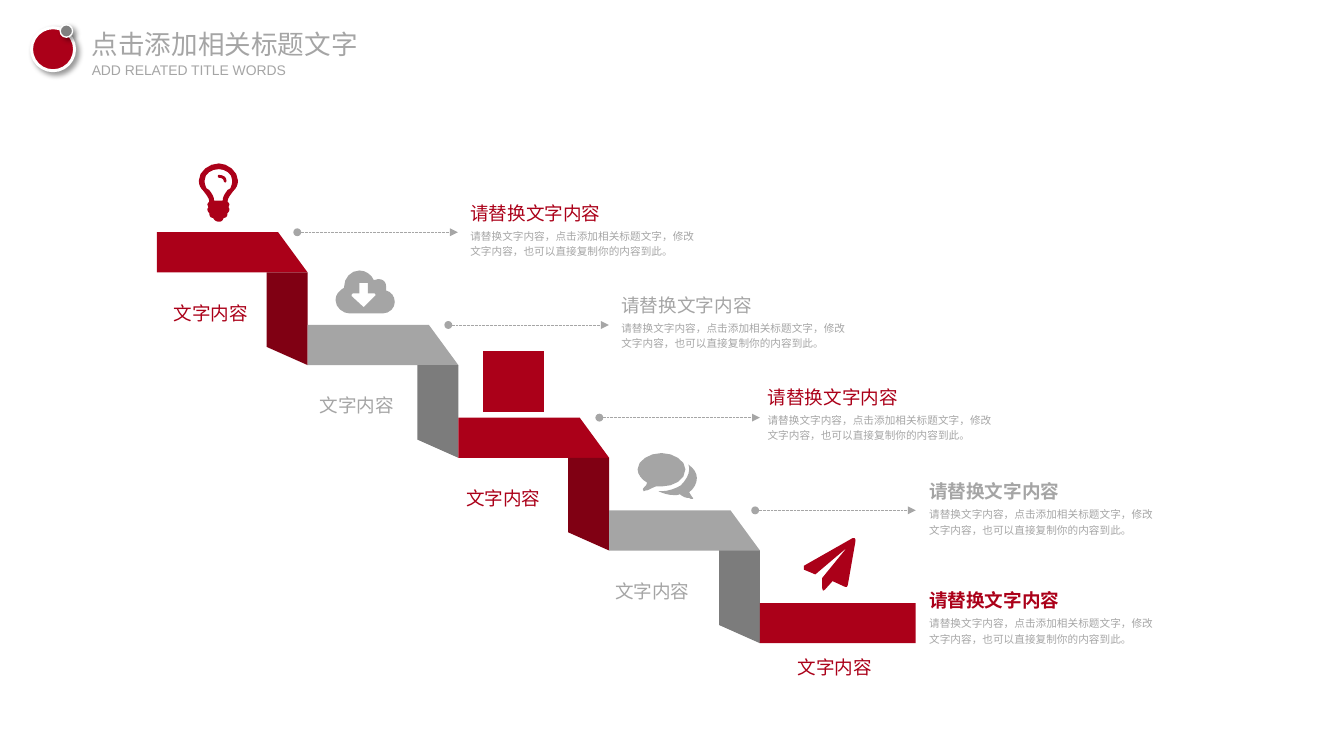
from dataclasses import dataclass
from lxml.etree import SubElement as Sub
from pptx import Presentation
from pptx.dml.color import RGBColor as RGB
from pptx.enum.dml import MSO_LINE as Dash
from pptx.enum.shapes import MSO_CONNECTOR as Link, MSO_SHAPE as Kind
from pptx.enum.text import MSO_ANCHOR as Anchor, MSO_AUTO_SIZE as Fit, PP_ALIGN as Align
from pptx.oxml.ns import qn
from pptx.util import Inches, Pt


@dataclass(frozen=True)
class Theme:
    font: str = "Arial"
    red: str = "AB0019"
    wine: str = "800013"
    gray: str = "A5A5A5"
    slate: str = "7C7C7C"
    dot: str = "808080"
    note: str = "A6A6A6"
    white: str = "FFFFFF"
    title: float = 20
    sub: float = 10.5
    head: float = 14
    body: float = 8


T = Theme()
TITLE, SUB = "点击添加相关标题文字", "ADD RELATED TITLE WORDS"
LABEL, HEAD = "文字内容", "请替换文字内容"
BODY = "请替换文字内容，点击添加相关标题文字，修改文字内容，也可以直接复制你的内容到此。"

BULB = [
    [(36, 29), (34, 32, 30, 36, 30, 40), (31, 41, 32, 42, 32, 43), (32, 44, 31, 45, 31, 46),
     (31, 46, 32, 47, 32, 48), (32, 50, 31, 51, 30, 52), (30, 53), (30, 56, 28, 57, 26, 57),
     (25, 60, 24, 61, 21, 61), (19, 61, 16, 60, 15, 57), (13, 57, 11, 56, 11, 53), (11, 52),
     (10, 51, 9, 50, 9, 48), (9, 47, 10, 46, 10, 46), (10, 45, 9, 44, 9, 43),
     (9, 42, 10, 41, 11, 40), (11, 36, 7, 32, 5, 29), (2, 26, 0, 23, 0, 18),
     (0, 8, 11, 0, 21, 0), (30, 0, 41, 8, 41, 18), (41, 23, 39, 26, 36, 29)],
    [(21, 6), (14, 6, 6, 10, 6, 18), (6, 21, 7, 24, 8, 26), (9, 27, 10, 27, 11, 28),
     (14, 32, 16, 35, 16, 39), (25, 39), (25, 35, 27, 32, 30, 28), (31, 27, 32, 27, 33, 26),
     (34, 24, 35, 21, 35, 18), (35, 10, 27, 6, 21, 6)],
    [(28, 20), (27, 20, 26, 19, 26, 18), (26, 16, 23, 15, 21, 15), (20, 15, 20, 14, 20, 13),
     (20, 13, 20, 12, 21, 12), (25, 12, 29, 14, 29, 18), (29, 19, 28, 20, 28, 20)],
]
CLOUD = [
    [(49, 45), (15, 45), (8, 45, 0, 39, 0, 31), (0, 25, 4, 21, 9, 18), (9, 17),
     (9, 8, 16, 0, 25, 0), (32, 0, 38, 5, 40, 10), (42, 10, 44, 9, 45, 9),
     (50, 9, 53, 12, 53, 17), (53, 18, 53, 20, 53, 21), (58, 22, 62, 27, 62, 33),
     (62, 39, 57, 45, 49, 45)],
    [(41, 24), (34, 24), (34, 13), (25, 13), (25, 24), (18, 24), (17, 25), (17, 27),
     (29, 38), (30, 38), (41, 27), (42, 26), (42, 25, 41, 24, 41, 24)],
]
BLOCK = [[(0, 0), (64, 0), (64, 64), (0, 64)]]
CHAT = [
    [(25, 35), (23, 35, 21, 35, 19, 35), (16, 36, 13, 38, 10, 39), (8, 39, 7, 40, 6, 40),
     (6, 39), (5, 38, 6, 37, 6, 37), (7, 35, 9, 35, 10, 31), (5, 28, 0, 23, 0, 17),
     (0, 8, 12, 0, 25, 0), (38, 0, 50, 8, 50, 17), (50, 28, 38, 35, 25, 35)],
    [(54, 41), (55, 43, 56, 44, 57, 46), (58, 47), (58, 48, 58, 48, 57, 48),
     (56, 48, 55, 48, 54, 47), (50, 47, 48, 46, 44, 43), (43, 44, 41, 44, 38, 44),
     (32, 44, 26, 42, 22, 40), (23, 40, 25, 40, 25, 40), (32, 40, 40, 37, 45, 34),
     (50, 29, 54, 23, 54, 17), (54, 16, 54, 14, 53, 12), (59, 16, 62, 21, 62, 26),
     (62, 32, 59, 37, 54, 41)],
]
PLANE = [
    [(54, 3), (46, 49), (45, 51), (43, 51), (30, 45), (22, 54), (20, 55), (19, 52), (19, 42),
     (45, 10), (12, 38), (0, 33), (0, 29), (51, 0), (53, 0), (54, 1, 54, 2, 54, 3)],
]
STEPS = [
    (BULB, (2.08, 1.71), (1.81, 3.11), 3.11, (4.92, 2.07), False),
    (CLOUD, (3.51, 2.83), (3.34, 4.08), 4.69, (6.5, 3.03), False),
    (BLOCK, (5.05, 3.67), (4.87, 5.05), 6.27, (8.03, 3.99), False),
    (CHAT, (6.67, 4.74), (6.43, 6.02), 7.9, (9.72, 4.98), True),
    (PLANE, (8.41, 5.63), (8.34, 6.82), None, (9.72, 6.12), True),
]
LEFT, TOP, RUN, DROP, THICK = 1.64, 2.43, (7.95 - 1.64) / 4, 0.97, 0.42
TREAD = [[(0, 0), (127, 0), (RUN * 100, 42), (0, 42)]]
RISER = [[(115, 42), (115, 120), (RUN * 100, 139), (RUN * 100, 42)]]

deck = Presentation()
deck.slide_width, deck.slide_height = Inches(14.06), Inches(7.91)
page = deck.slides.add_slide(deck.slide_layouts[6]).shapes


def paint(shape, color):
    shape.shadow.inherit = False
    shape.fill.solid()
    shape.fill.fore_color.rgb = RGB.from_string(color)
    shape.line.fill.background()
    return shape


def trace(loop):
    dots = [loop[0]]
    for part in loop[1:]:
        if len(part) == 2:
            dots.append(part)
            continue
        ends = [dots[-1], part[:2], part[2:4], part[4:]]
        for t in (0.25, 0.5, 0.75, 1):
            s = 1 - t
            mix = (s ** 3, 3 * s * s * t, 3 * s * t * t, t ** 3)
            dots.append(tuple(sum(m * p[k] for m, p in zip(mix, ends)) for k in (0, 1)))
    return dots


def draw(loops, x, y, color):
    pen = None
    for loop in loops:
        dots = [(Inches(x + a / 100), Inches(y + b / 100)) for a, b in trace(loop)]
        if pen:
            pen.move_to(*dots[0])
        else:
            pen = page.build_freeform(*dots[0])
        pen.add_line_segments(dots[1:], close=True)
    paint(pen.convert_to_shape(), color)


def write(text, x, y, w, h, size, color, align=Align.LEFT, wrap=False, bold=None,
          lead=None, gap=False):
    frame = page.add_textbox(Inches(x), Inches(y), Inches(w), Inches(h)).text_frame
    frame.margin_left = frame.margin_right = frame.margin_top = frame.margin_bottom = 0
    frame.word_wrap, frame.auto_size = wrap, Fit.SHAPE_TO_FIT_TEXT
    frame.vertical_anchor = Anchor.MIDDLE if gap else Anchor.TOP
    para = frame.paragraphs[0]
    para.alignment, para.line_spacing = align, lead
    if gap:
        Sub(Sub(para._p.get_or_add_pPr(), qn("a:spcBef")), qn("a:spcPct"), val="20000")
    run = para.add_run()
    run.text = text
    run.font.name, run.font.size, run.font.bold = T.font, Pt(size), bold
    run.font.color.rgb = RGB.from_string(color)


def point(x, y):
    link = page.add_connector(Link.STRAIGHT, Inches(x), Inches(y), Inches(x + 1.68), Inches(y))
    link.line.color.rgb = RGB.from_string(T.note)
    link.line.width, link.line.dash_style = Pt(0.5), Dash.ROUND_DOT
    edge = link.line._get_or_add_ln()
    Sub(edge, qn("a:headEnd"), type="oval")
    Sub(edge, qn("a:tailEnd"), type="triangle")
    Sub(link._element.spPr, qn("a:effectLst"))


def badge(x, y, size, color, rim):
    disc = paint(page.add_shape(Kind.OVAL, Inches(x), Inches(y), Inches(size), Inches(size)), color)
    disc.line.color.rgb, disc.line.width = RGB.from_string(T.white), Pt(rim)
    glow = Sub(disc._element.spPr.find(qn("a:effectLst")), qn("a:outerShdw"),
               blurRad=str(Pt(4)), dist=str(Pt(3)), dir="2700000", algn="tl", rotWithShape="0")
    Sub(Sub(glow, qn("a:srgbClr"), val="000000"), qn("a:alpha"), val="40000")


for i, (icon, spot, tag, start, head, bold) in enumerate(STEPS):
    x, y = LEFT + i * RUN, TOP + i * DROP
    color, shade = ((T.red, T.wine), (T.gray, T.slate))[i % 2]
    if start:
        draw(TREAD, x, y, color)
        draw(RISER, x, y, shade)
        point(start, y)
    else:
        paint(page.add_shape(Kind.RECTANGLE, Inches(x), Inches(y), Inches(1.63), Inches(THICK)), color)
    draw(icon, *spot, color)
    write(LABEL, *tag, 0.79, 0.28, T.head, color, align=Align.CENTER, lead=1.2)
    write(HEAD, *head, 1.54, 0.28, T.head, color, bold=bold, lead=1.2, gap=True)
    write(BODY, head[0], head[1] + 0.23, 2.35, 0.48, T.body, T.note, wrap=True, lead=1.2, gap=True)

write(TITLE, 0.96, 0.29, 2.8, 0.34, T.title, T.gray)
write(SUB, 0.96, 0.64, 2.08, 0.18, T.sub, T.gray)
badge(0.33, 0.29, 0.45, T.red, 2.25)
badge(0.63, 0.26, 0.13, T.dot, 1)

deck.save("out.pptx")
